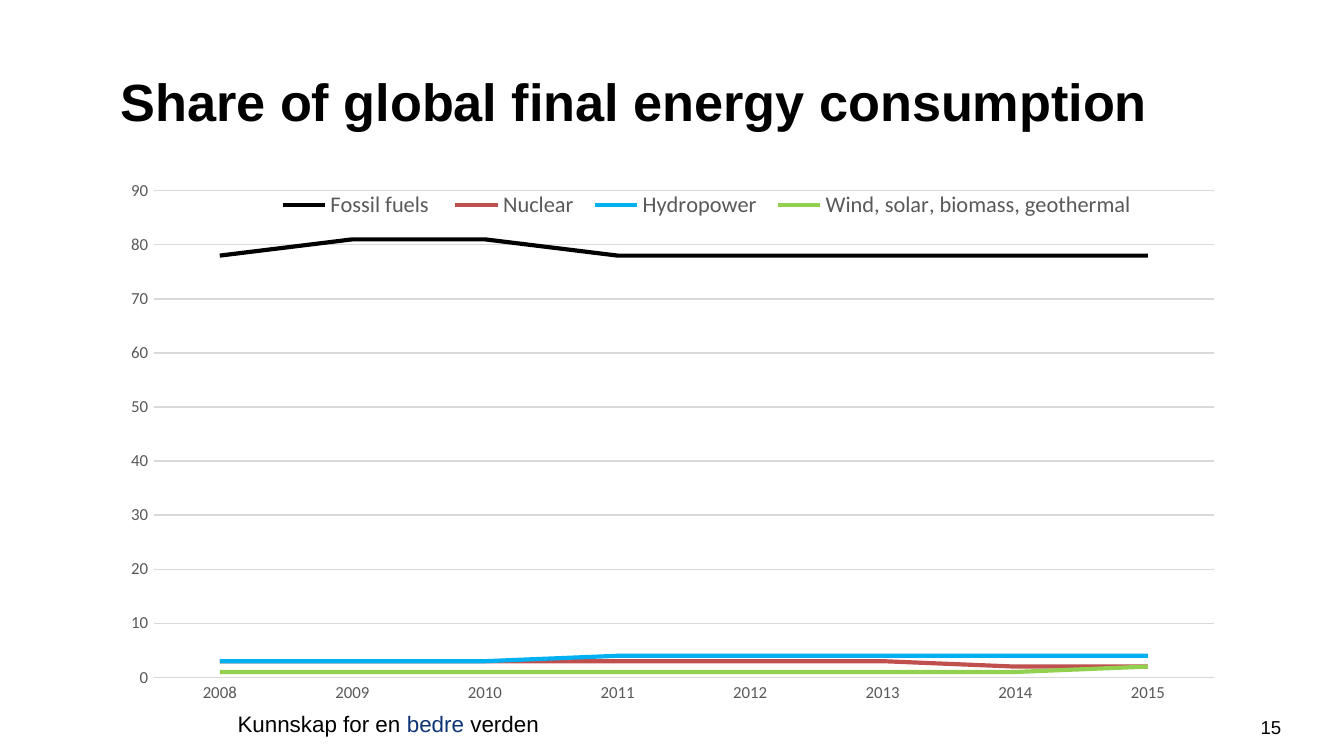
from lxml import etree
from pptx import Presentation
from pptx import util as u
from pptx.chart import data as chart_data
from pptx.dml import color
from pptx.enum import chart as kinds, text
from pptx.oxml import ns

COLORS = {
    "black": "000000", "white": "FFFFFF", "navy": "0D3475",
    "label": "595959", "grid": "D9D9D9",
    "fossil": "000000", "nuclear": "C0504D", "hydro": "00B0F0", "other": "92D050",
}


def add_text(page, area, runs, size, bold=False, align=text.PP_ALIGN.LEFT,
             anchor=text.MSO_ANCHOR.TOP):
    """Add a one-paragraph box; runs are (words, colour name) pairs."""
    box = page.shapes.add_textbox(*[u.Cm(length) for length in area])
    box.text_frame.word_wrap = True
    box.text_frame.vertical_anchor = anchor
    para = box.text_frame.paragraphs[0]
    para.alignment = align
    for words, name in runs:
        span = para.add_run()
        span.text = words
        span.font.name = "Arial"
        span.font.size = u.Pt(size)
        span.font.bold = bold
        span.font.color.rgb = color.RGBColor.from_string(COLORS[name])


def set_layout(parent, following, fractions, inner=False):
    """Place a chart part by its x, y, w and h as fractions of the chart."""
    for old in parent.findall(ns.qn("c:layout")):
        parent.remove(old)
    layout = etree.Element(ns.qn("c:layout"))
    manual = etree.SubElement(layout, ns.qn("c:manualLayout"))
    settings = [("layoutTarget", "inner")] if inner else []
    settings += [("xMode", "edge"), ("yMode", "edge")]
    settings += zip("xywh", fractions)
    for tag, value in settings:
        etree.SubElement(manual, ns.qn("c:" + tag)).set("val", str(value))
    following.addprevious(layout)


deck = Presentation()
deck.slide_width, deck.slide_height = u.Cm(25.4), u.Cm(14.28)
page = deck.slides.add_slide(deck.slide_layouts[6])

# Footer, page number and title
add_text(page, (4.24, 13.28, 6.25, 0.76),
         [("Kunnskap for en ", "black"), ("bedre ", "navy"), ("verden", "black")], 12)
add_text(page, (23.55, 13.39, 0.94, 0.76), [("15", "black")], 10,
         align=text.PP_ALIGN.CENTER)
add_text(page, (2.03, 0.64, 21.79, 2.54),
         [("Share of global final energy consumption", "black")], 28, bold=True,
         anchor=text.MSO_ANCHOR.MIDDLE)

# Energy chart
energy = [
    ("Fossil fuels ", "fossil", (78, 81, 81, 78, 78, 78, 78, 78)),
    ("Nuclear", "nuclear", (3, 3, 3, 3, 3, 3, 2, 2)),
    ("Hydropower", "hydro", (3, 3, 3, 4, 4, 4, 4, 4)),
    ("Wind, solar, biomass, geothermal", "other", (1, 1, 1, 1, 1, 1, 1, 2)),
]
shares = chart_data.CategoryChartData()
shares.categories = [str(year) for year in range(2008, 2016)]
for name, _, values in energy:
    shares.add_series(name, values)
chart = page.shapes.add_chart(
    kinds.XL_CHART_TYPE.LINE, u.Cm(2.03), u.Cm(3.18), u.Cm(21.79), u.Cm(10.57),
    shares).chart
chart.has_title = False
chart.font.name = "Calibri"
chart.font.size = u.Pt(10)
chart.font.color.rgb = color.RGBColor.from_string(COLORS["black"])

plot = chart.plots[0]
plot.vary_by_categories = False
for series, (_, name, _) in zip(plot.series, energy):
    series.smooth = False
    series.marker.style = kinds.XL_MARKER_STYLE.NONE
    series.format.line.width = u.Pt(2.25)
    series.format.line.color.rgb = color.RGBColor.from_string(COLORS[name])

years, percent = chart.category_axis, chart.value_axis
percent.minimum_scale, percent.maximum_scale, percent.major_unit = 0, 90, 10
percent.has_major_gridlines = True
percent.format.line.fill.background()
for line in (years.format.line, percent.major_gridlines.format.line):
    line.width = u.Pt(0.75)
    line.color.rgb = color.RGBColor.from_string(COLORS["grid"])
for axis in (years, percent):
    axis.major_tick_mark = axis.minor_tick_mark = kinds.XL_TICK_MARK.NONE

chart.has_legend = True
legend = chart.legend
legend.position = kinds.XL_LEGEND_POSITION.BOTTOM
legend.include_in_layout = True
for font, size in ((years.tick_labels.font, 9), (percent.tick_labels.font, 9),
                   (legend.font, 12)):
    font.name = "Calibri"
    font.size = u.Pt(size)
    font.color.rgb = color.RGBColor.from_string(COLORS["label"])

# Chart layout: the legend lies over the top of the plot
plot_area = plot._element.getparent()
set_layout(plot_area, plot._element, (0.04, 0.04, 0.92, 0.87), inner=True)
set_layout(legend._element, legend._element.find(ns.qn("c:overlay")),
           (0.14, 0.03, 0.76, 0.07))
plot_style = etree.SubElement(plot_area, ns.qn("c:spPr"))
plot_fill = etree.SubElement(plot_style, ns.qn("a:solidFill"))
etree.SubElement(plot_fill, ns.qn("a:srgbClr")).set("val", COLORS["white"])

deck.save("out.pptx")
